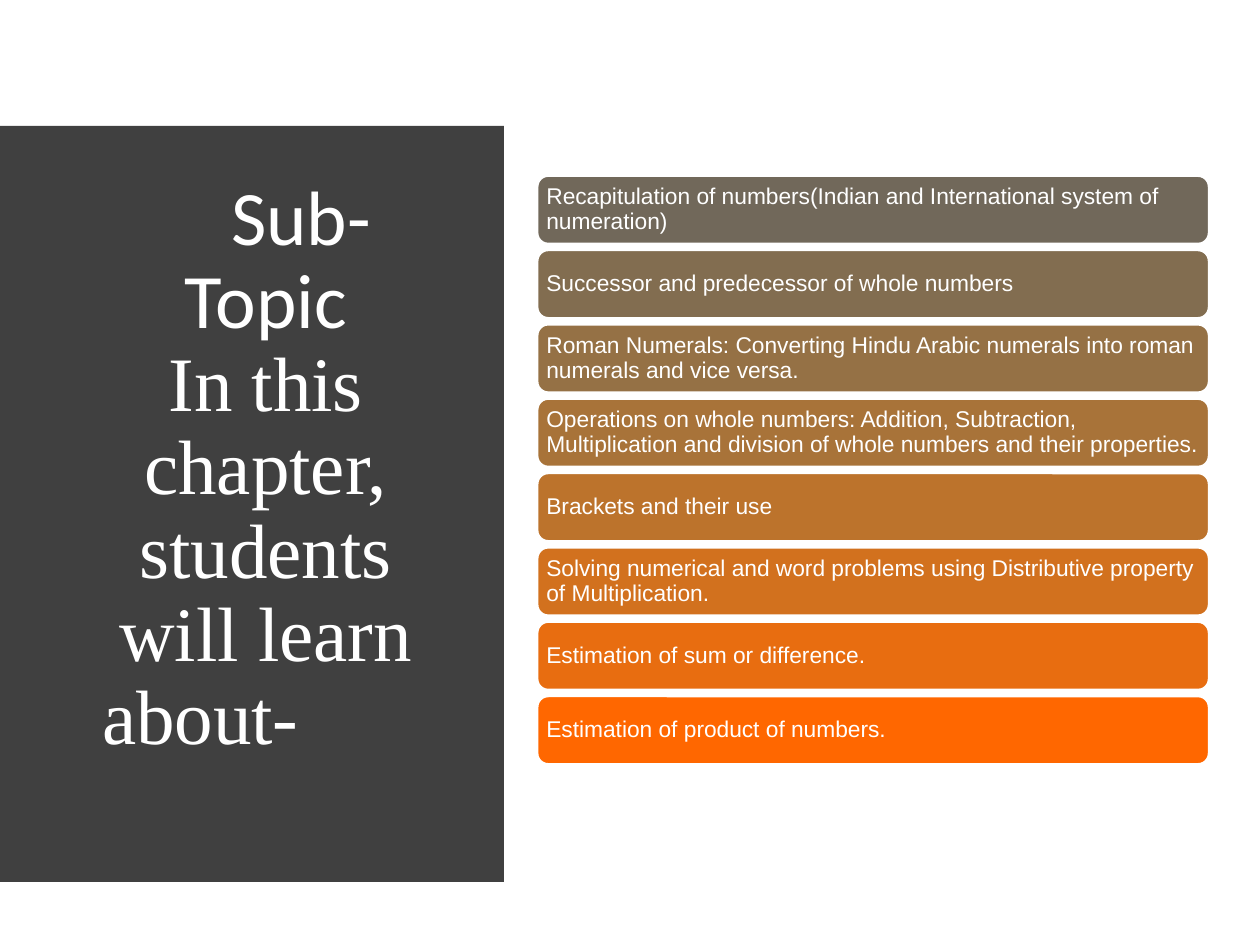
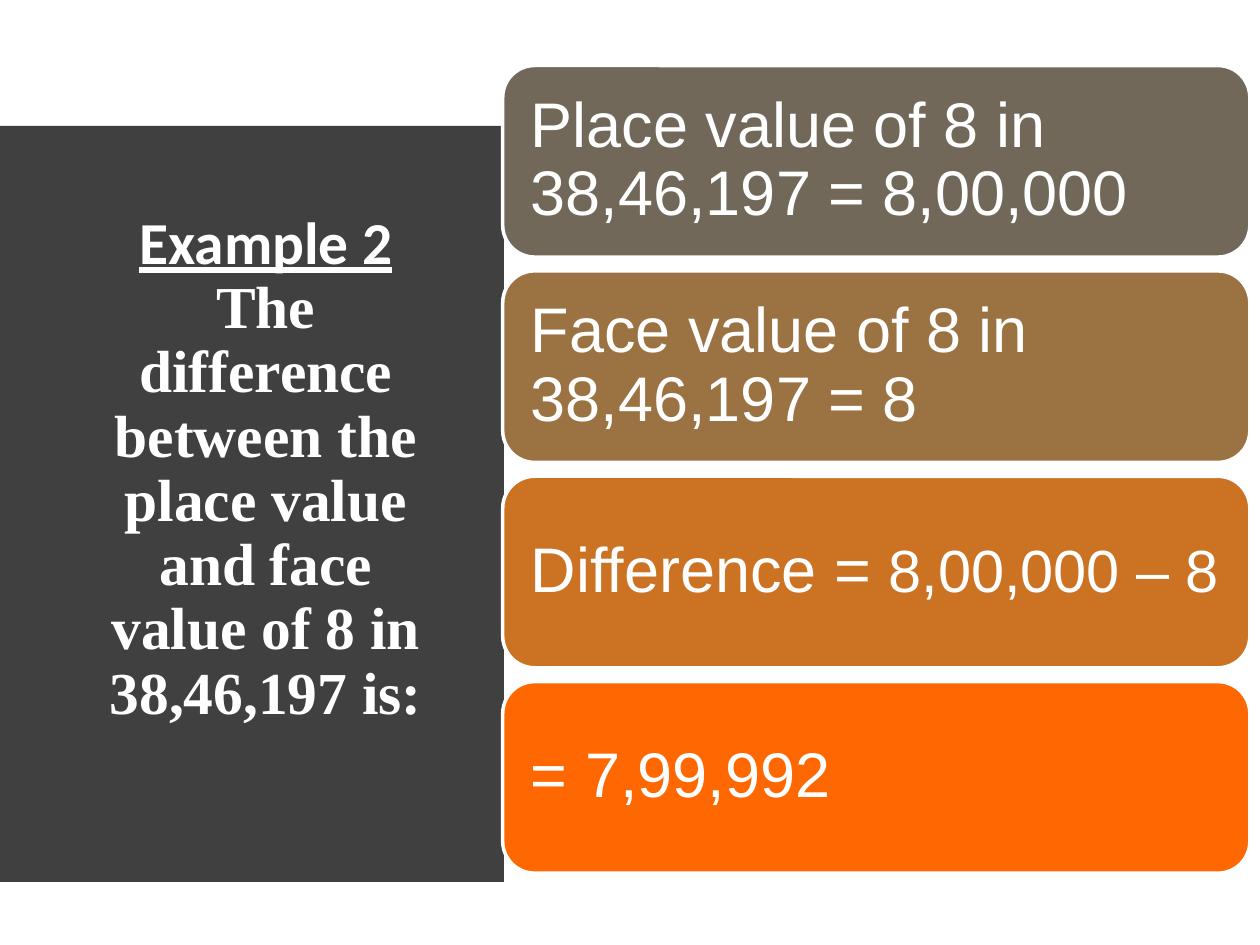
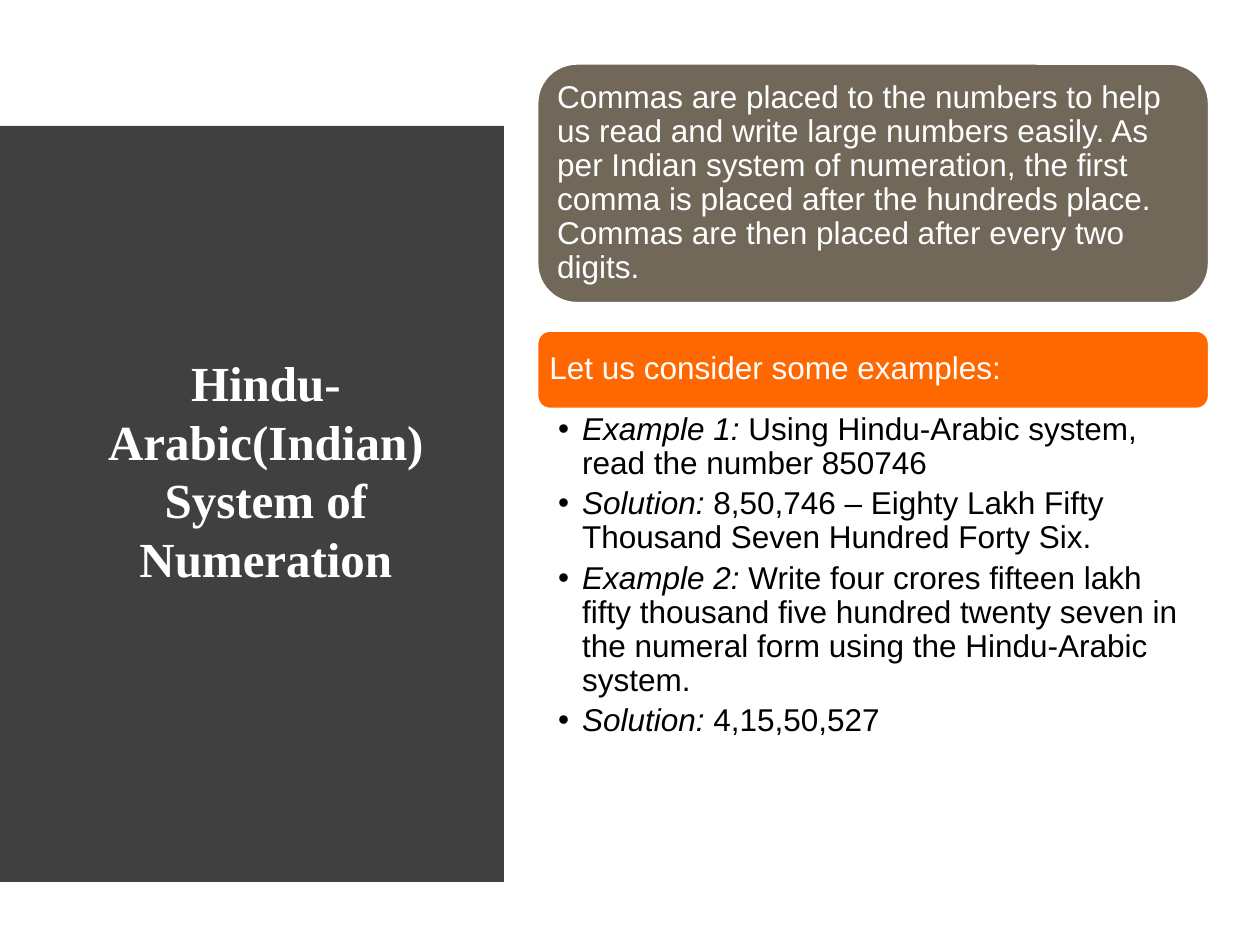
from colorsys import hls_to_rgb, rgb_to_hls
from dataclasses import dataclass

from lxml.etree import SubElement
from pptx import Presentation
from pptx.dml.color import RGBColor as Color
from pptx.enum.shapes import MSO_SHAPE as Preset
from pptx.enum.text import MSO_ANCHOR as Anchor, MSO_AUTO_SIZE as AutoSize, PP_ALIGN as Align
from pptx.oxml.ns import qn
from pptx.util import Inches, Pt


@dataclass(frozen=True)
class Theme:
    panel: str = "404040"
    first_bar: str = "71685A"
    last_bar: str = "FF6700"
    light: str = "FFFFFF"
    dark: str = "000000"
    body_font: str = "Arial"
    heading_font: str = "Calibri"
    title_font: str = "Times New Roman"
    line_spacing: float = 0.9
    bar_line: float = 2
    list_size: float = 18
    list_gap: float = 3.6


THEME = Theme()
TITLE_AND_CONTENT, TITLE_ONLY = 1, 5
WIDTH, HEIGHT = 10, 7.5
PANEL_LEFT, PANEL_TOP, PANEL_BOTTOM = 0.4, 0.52, 6.96
PANEL_EDGE, PANEL_BULGE, EDGE_STEPS = 3.81, 0.18, 48
TITLE_BOX = (0.71, 1.11, 2.8, 5.24)
LIST_BOX = (4.26, 3.25, 5.34, 3.45)
HEADING = {"name": THEME.heading_font}

SLIDES = [
    {
        "title": [
            {"runs": [("Sub-Topic", HEADING)], "indent": 0.56},
            {"runs": [("In this chapter, students will learn", {})]},
            {"runs": [("about-", {})], "align": Align.LEFT},
        ],
        "title_style": {"size": 44},
        "bars": [
            "Recapitulation of numbers(Indian and International system of numeration)",
            "Successor and predecessor of whole numbers",
            "Roman Numerals: Converting Hindu Arabic numerals into roman numerals and vice versa.",
            "Operations on whole numbers: Addition, Subtraction, Multiplication and division of "
            "whole numbers and their properties.",
            "Brackets and their use",
            "Solving numerical and word problems using Distributive property of Multiplication.",
            "Estimation of sum or difference.",
            "Estimation of product of numbers.",
        ],
        "left": 4.26, "top": 1.39, "width": 5.34,
        "heights": [0.55] * 8, "gap": 0.04, "inset": 0.05, "size": 13,
    },
    {
        "title": [
            {"runs": [
                ("Example 2", {**HEADING, "underline": True}),
                (" ", {"bold": False}),
                ("The difference between the place value and face value of 8 in 38,46,197 is:", {}),
            ]},
        ],
        "title_style": {"size": 34, "bold": True},
        "bars": [
            "Place value of 8 in 38,46,197 = 8,00,000",
            "Face value of 8 in 38,46,197 = 8",
            [("Difference = ", {}), ("8,00,000 – 8", {"size": 34})],
            "= 7,99,992",
        ],
        "left": 3.99, "top": 0.52, "width": 5.93,
        "heights": [1.52] * 4, "gap": 0.11, "inset": 0.15, "size": 36,
    },
    {
        "title": [{"runs": [("Hindu-Arabic(Indian) System of Numeration", {})]}],
        "title_style": {"size": 28, "bold": True},
        "title_spacing": 1.0,
        "bars": [
            "Commas are placed to the numbers to help us read and write large numbers easily. "
            "As per Indian system of numeration, the first comma is placed after the hundreds "
            "place. Commas are then placed after every two digits.",
            "Let us consider some examples:",
        ],
        "left": 4.26, "top": 0.5, "width": 5.34,
        "heights": [1.91, 0.63], "gap": 0.21, "inset": 0.07, "size": 18,
        "examples": [
            ("Example 1:", " Using Hindu-Arabic system, read the number 850746"),
            ("Solution:", " 8,50,746 – Eighty Lakh Fifty Thousand Seven Hundred Forty Six."),
            ("Example 2:", " Write four crores fifteen lakh fifty thousand five hundred twenty "
                           "seven in the numeral form using the Hindu-Arabic system."),
            ("Solution:", " 4,15,50,527"),
        ],
    },
]


def blend(share):
    first, last = (
        rgb_to_hls(*(part / 255 for part in Color.from_string(code)))
        for code in (THEME.first_bar, THEME.last_bar)
    )
    mixed = (start + (end - start) * share for start, end in zip(first, last))
    return Color(*(round(part * 255) for part in hls_to_rgb(*mixed)))


def place(shape, box):
    shape.left, shape.top, shape.width, shape.height = (Inches(length) for length in box)


def prepare_frame(shape, insets, anchor):
    frame = shape.text_frame
    frame.word_wrap = True
    frame.auto_size = AutoSize.NONE
    frame.vertical_anchor = anchor
    (frame.margin_left, frame.margin_top,
     frame.margin_right, frame.margin_bottom) = (Inches(inset) for inset in insets)
    return frame


def write_runs(paragraph, runs, base):
    for text, changes in runs:
        run = paragraph.add_run()
        run.text = text
        style = {**base, **changes}
        run.font.color.rgb = Color.from_string(style.pop("color"))
        run.font.size = Pt(style.pop("size"))
        for key, value in style.items():
            setattr(run.font, key, value)


def paragraphs_of(frame, items):
    for index, item in enumerate(items):
        paragraph = frame.add_paragraph() if index else frame.paragraphs[0]
        paragraph.space_before = Pt(0)
        paragraph.line_spacing = THEME.line_spacing
        yield paragraph, item


def add_panel(slide):
    middle = (PANEL_TOP + PANEL_BOTTOM) / 2
    half = (PANEL_BOTTOM - PANEL_TOP) / 2
    edge = []
    for step in range(EDGE_STEPS + 1):
        offset = 2 * step / EDGE_STEPS - 1
        bulge = PANEL_BULGE * (1 - abs(offset) ** 2.3)
        edge.append((PANEL_EDGE + bulge, middle + half * offset))
    builder = slide.shapes.build_freeform(PANEL_LEFT, PANEL_TOP, scale=Inches(1))
    builder.add_line_segments(edge + [(PANEL_LEFT, PANEL_BOTTOM)], close=True)
    panel = builder.convert_to_shape()
    panel.shadow.inherit = False
    panel.fill.solid()
    panel.fill.fore_color.rgb = Color.from_string(THEME.panel)
    panel.line.fill.background()
    slide.shapes._spTree.insert(2, panel._element)


def fill_title(slide, content):
    title = slide.shapes.title
    place(title, TITLE_BOX)
    frame = prepare_frame(title, [0.1] * 4, Anchor.MIDDLE)
    base = {"name": THEME.title_font, "color": THEME.light, **content["title_style"]}
    for paragraph, item in paragraphs_of(frame, content["title"]):
        paragraph.alignment = item.get("align", Align.CENTER)
        paragraph.line_spacing = content.get("title_spacing", THEME.line_spacing)
        if "indent" in item:
            paragraph._p.get_or_add_pPr().set("indent", str(Inches(item["indent"])))
        write_runs(paragraph, item["runs"], base)


def add_bars(slide, content):
    base = {"name": THEME.body_font, "color": THEME.light, "size": content["size"]}
    top = content["top"]
    last = len(content["bars"]) - 1
    for index, (text, height) in enumerate(zip(content["bars"], content["heights"])):
        bar = slide.shapes.add_shape(Preset.ROUNDED_RECTANGLE, 0, 0, 0, 0)
        place(bar, (content["left"], top, content["width"], height))
        bar.shadow.inherit = False
        bar.fill.solid()
        bar.fill.fore_color.rgb = blend(index / last)
        bar.line.color.rgb = Color.from_string(THEME.light)
        bar.line.width = Pt(THEME.bar_line)
        frame = prepare_frame(bar, [content["inset"]] * 4, Anchor.MIDDLE)
        runs = [(text, {})] if isinstance(text, str) else text
        for paragraph, item in paragraphs_of(frame, [runs]):
            paragraph.alignment = Align.LEFT
            write_runs(paragraph, item, base)
        top += height + content["gap"]


def fill_examples(slide, examples):
    body = slide.placeholders[1]
    place(body, LIST_BOX)
    frame = prepare_frame(body, (0.17, 0.03, 0.14, 0.03), Anchor.TOP)
    base = {"name": THEME.body_font, "color": THEME.dark, "size": THEME.list_size}
    for paragraph, (label, text) in paragraphs_of(frame, examples):
        paragraph.space_after = Pt(THEME.list_gap)
        properties = paragraph._p.get_or_add_pPr()
        properties.set("marL", str(Inches(0.19)))
        properties.set("indent", str(-Inches(0.19)))
        SubElement(properties, qn("a:buChar"), char="•")
        write_runs(paragraph, [(label, {"italic": True}), (text, {})], base)


def main():
    presentation = Presentation()
    presentation.slide_width, presentation.slide_height = Inches(WIDTH), Inches(HEIGHT)
    for content in SLIDES:
        layout = TITLE_AND_CONTENT if "examples" in content else TITLE_ONLY
        slide = presentation.slides.add_slide(presentation.slide_layouts[layout])
        add_panel(slide)
        fill_title(slide, content)
        add_bars(slide, content)
        if "examples" in content:
            fill_examples(slide, content["examples"])
    presentation.save("out.pptx")


if __name__ == "__main__":
    main()
